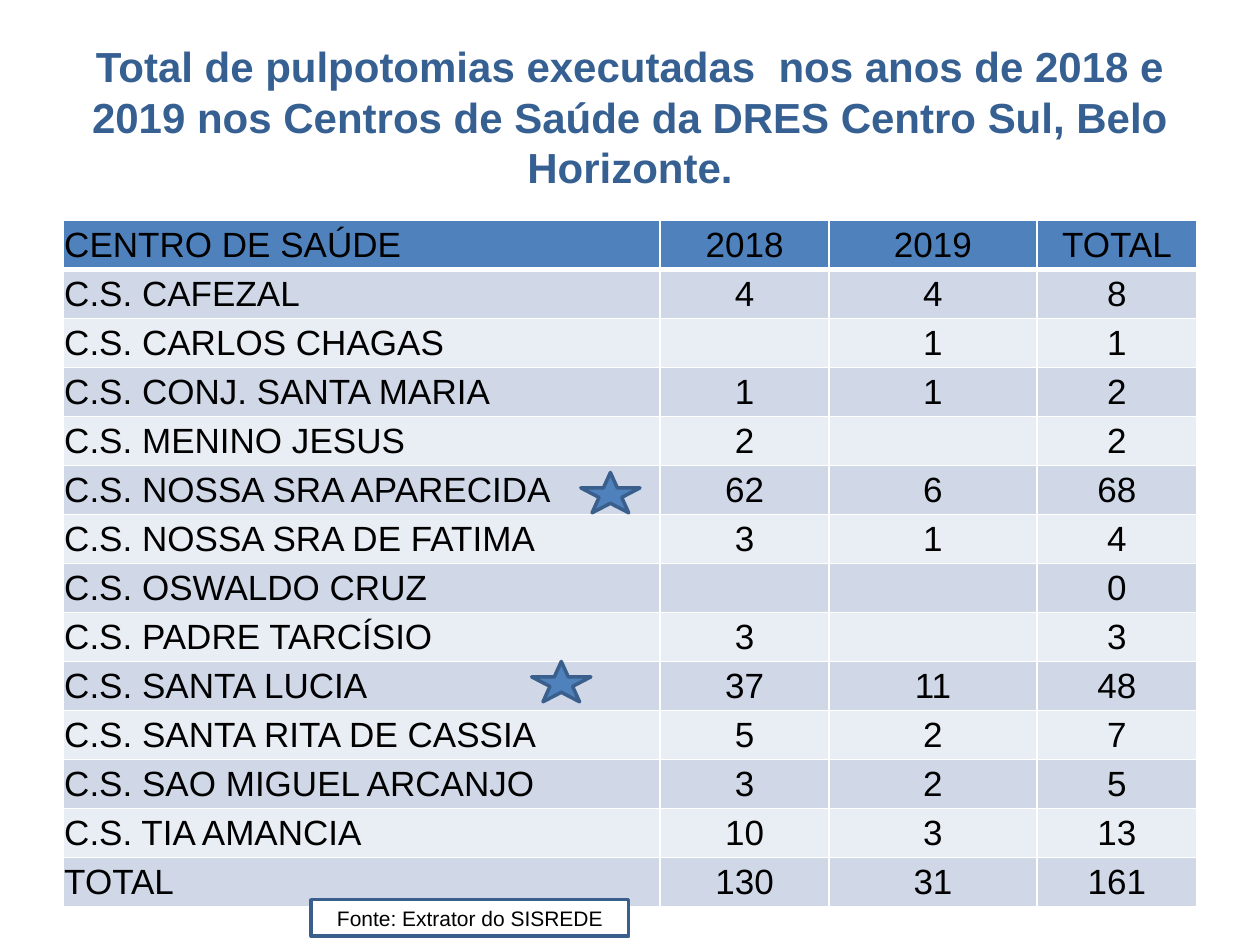
from lxml import etree
from pptx import Presentation
from pptx import util as u
from pptx.dml.color import RGBColor
from pptx.enum import shapes, text
from pptx.oxml.ns import qn

COLORS = {
    "title": "376092",
    "header": "4F81BD",
    "odd": "D0D8E8",
    "even": "E9EDF4",
    "outline": "3A5F8C",
    "white": "FFFFFF",
    "black": "000000",
}

HEADINGS = ["CENTRO DE SAÚDE", "2018", "2019", "TOTAL"]
HEALTH_CENTERS = [
    ["C.S. CAFEZAL", "4", "4", "8"],
    ["C.S. CARLOS CHAGAS", "", "1", "1"],
    ["C.S. CONJ. SANTA MARIA", "1", "1", "2"],
    ["C.S. MENINO JESUS", "2", "", "2"],
    ["C.S. NOSSA SRA APARECIDA", "62", "6", "68"],
    ["C.S. NOSSA SRA DE FATIMA", "3", "1", "4"],
    ["C.S. OSWALDO CRUZ", "", "", "0"],
    ["C.S. PADRE TARCÍSIO", "3", "", "3"],
    ["C.S. SANTA LUCIA", "37", "11", "48"],
    ["C.S. SANTA RITA DE CASSIA", "5", "2", "7"],
    ["C.S. SAO MIGUEL ARCANJO", "3", "2", "5"],
    ["C.S. TIA AMANCIA", "10", "3", "13"],
    ["TOTAL", "130", "31", "161"],
]


class SlideBuilder:
    font_name = "Arial"

    def __init__(self, slide):
        self.slide = slide

    def color(self, name):
        return RGBColor.from_string(COLORS[name])

    def set_text(self, frame, content, size, color="black", bold=False, centered=True):
        frame.text = content
        frame.word_wrap = True
        frame.vertical_anchor = text.MSO_ANCHOR.MIDDLE
        paragraph = frame.paragraphs[0]
        paragraph.alignment = text.PP_ALIGN.CENTER if centered else text.PP_ALIGN.LEFT
        for run in paragraph.runs:
            run.font.name = self.font_name
            run.font.size = u.Pt(size)
            run.font.bold = bold
            run.font.color.rgb = self.color(color)

    def title(self, box, content):
        shape = self.slide.shapes.add_textbox(*map(u.Inches, box))
        self.set_text(shape.text_frame, content, 24, "title", bold=True)

    def shape(self, kind, box, fill):
        shape = self.slide.shapes.add_shape(kind, *map(u.Inches, box))
        shape.shadow.inherit = False
        shape.fill.solid()
        shape.fill.fore_color.rgb = self.color(fill)
        shape.line.color.rgb = self.color("outline")
        shape.line.width = u.Pt(2)
        return shape

    def star(self, left, top):
        self.shape(shapes.MSO_SHAPE.STAR_5_POINT, (left, top, 0.47, 0.32), "header")

    def source_box(self, box, content):
        shape = self.shape(shapes.MSO_SHAPE.RECTANGLE, box, "white")
        self.set_text(shape.text_frame, content, 12)

    def borders(self, cell, widths):
        properties = cell._tc.get_or_add_tcPr()
        for side, points in widths.items():
            line = etree.SubElement(properties, qn(f"a:ln{side}"), w=str(u.Pt(points)))
            fill = etree.SubElement(line, qn("a:solidFill"))
            etree.SubElement(fill, qn("a:srgbClr"), val=COLORS["white"])

    def table(self, box, column_widths, rows):
        frame = self.slide.shapes.add_table(
            len(rows), len(column_widths), *map(u.Inches, box)
        )
        table = frame.table
        for column, width in zip(table.columns, column_widths):
            column.width = u.Inches(width)
        for row_index, values in enumerate(rows):
            table.rows[row_index].height = u.Inches(box[3] / len(rows))
            band = "odd" if row_index % 2 else "even"
            fill = band if row_index else "header"
            widths = {
                "L": 1,
                "R": 1,
                "T": 3 if row_index == 1 else 1,
                "B": 3 if row_index == 0 else 1,
            }
            for column_index, value in enumerate(values):
                cell = table.cell(row_index, column_index)
                self.set_text(cell.text_frame, value, 20, centered=column_index > 0)
                cell.vertical_anchor = text.MSO_ANCHOR.MIDDLE
                cell.margin_left = cell.margin_right = cell.margin_top = u.Inches(0.01)
                cell.margin_bottom = 0
                self.borders(cell, widths)
                cell.fill.solid()
                cell.fill.fore_color.rgb = self.color(fill)


def main():
    presentation = Presentation()
    presentation.slide_width = u.Inches(10)
    presentation.slide_height = u.Inches(7.5)
    builder = SlideBuilder(presentation.slides.add_slide(presentation.slide_layouts[6]))

    builder.title(
        (0.5, 0.3, 9, 1.25),
        "Total de pulpotomias executadas  nos anos de 2018 e 2019 "
        "nos Centros de Saúde da DRES Centro Sul, Belo Horizonte.",
    )
    builder.table(
        (0.5, 1.75, 9, 5.45), [4.74, 1.34, 1.65, 1.27], [HEADINGS, *HEALTH_CENTERS]
    )
    builder.star(4.61, 3.75)
    builder.star(4.22, 5.25)
    builder.source_box((2.47, 7.14, 2.52, 0.29), "Fonte: Extrator do SISREDE")

    presentation.save("out.pptx")


if __name__ == "__main__":
    main()
